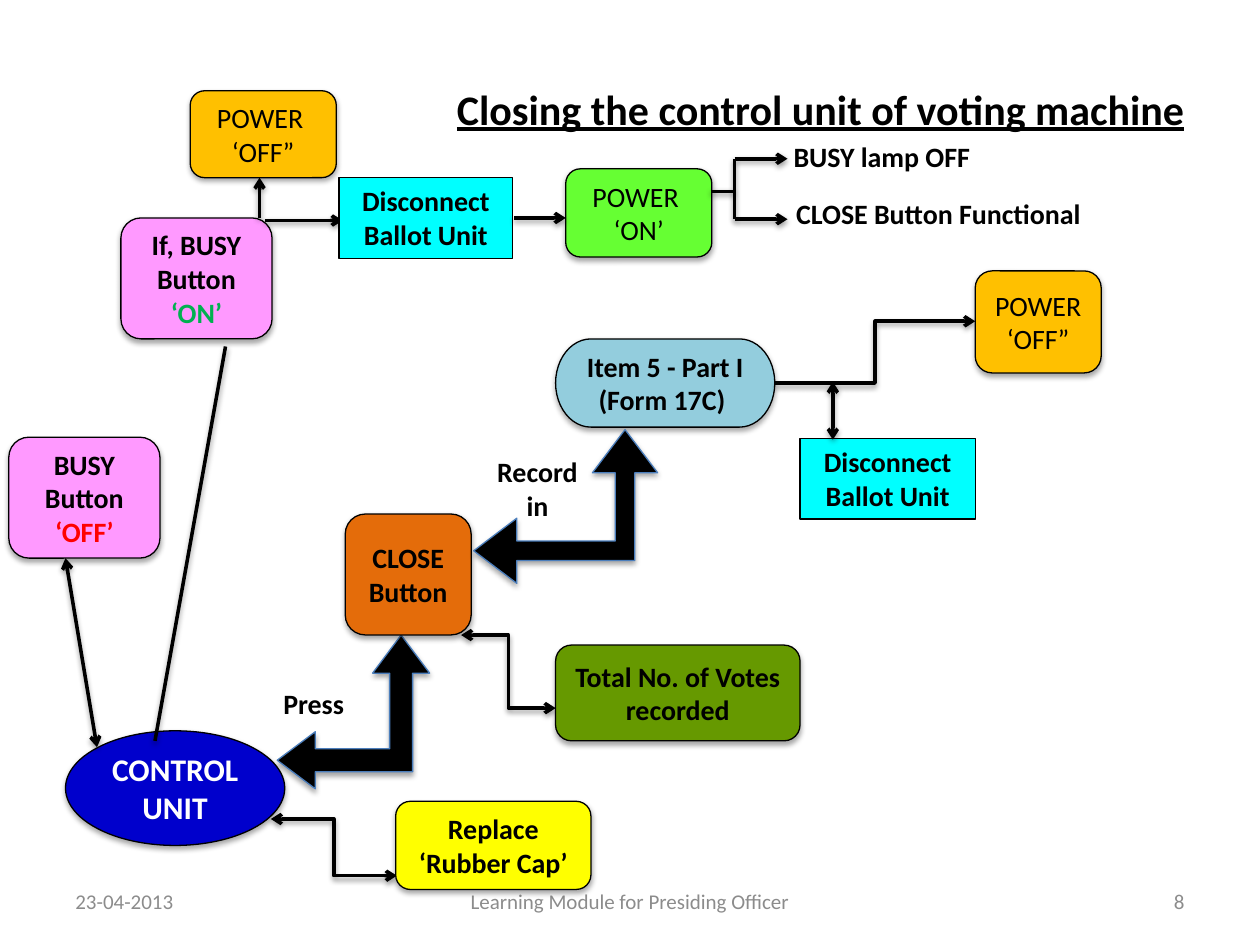
from lxml import etree
from pptx import Presentation
from pptx.dml.color import RGBColor
from pptx.enum.shapes import MSO_CONNECTOR, MSO_SHAPE
from pptx.enum.text import MSO_ANCHOR, PP_ALIGN
from pptx.oxml.ns import qn
from pptx.util import Inches, Pt

ROUND, RECT = MSO_SHAPE.ROUNDED_RECTANGLE, MSO_SHAPE.RECTANGLE
OVAL, TERMINATOR = MSO_SHAPE.OVAL, MSO_SHAPE.FLOWCHART_TERMINATOR
CORNER_ARROW = MSO_SHAPE.LEFT_UP_ARROW
STRAIGHT, ELBOW = MSO_CONNECTOR.STRAIGHT, MSO_CONNECTOR.ELBOW
LEFT, CENTER, RIGHT = PP_ALIGN.LEFT, PP_ALIGN.CENTER, PP_ALIGN.RIGHT
TOP, MIDDLE = MSO_ANCHOR.TOP, MSO_ANCHOR.MIDDLE
COLORS = {
    "black": "000000", "white": "FFFFFF", "gray": "8C8C8C", "navy": "0000CC",
    "orange": "E46C0A", "olive": "669900", "sky": "93CDDD", "amber": "FFC000",
    "cyan": "00FFFF", "yellow": "FFFF00", "pink": "FF99FF", "lime": "66FF33",
    "red": "FF0000", "green": "00B050", "edge": "4B7EBC",
}
FONT = "Calibri"
CELL = 0.1
POWER_OFF = ["POWER ", "‘OFF”"]
DISCONNECT = ["Disconnect Ballot Unit"]


def rgb(name):
    return RGBColor.from_string(COLORS[name])


def cells(box, *lengths):
    return [Inches((n + box[i % 2]) * CELL) if i < 2 else Inches(n * CELL)
            for i, n in enumerate(lengths)]


def add_shadow(s, dist, alpha):
    effects = etree.SubElement(s._element.spPr, qn("a:effectLst"))
    shadow = etree.SubElement(effects, qn("a:outerShdw"), blurRad="40000",
                              dist=str(dist), dir="5400000", rotWithShape="0")
    color = etree.SubElement(shadow, qn("a:srgbClr"), val=COLORS["black"])
    etree.SubElement(color, qn("a:alpha"), val=str(alpha * 1000))


def write(s, lines, size=16, color="black", bold=True, align=CENTER,
          anchor=MIDDLE, underline=False, accent=None):
    tf = s.text_frame
    tf.word_wrap = True
    tf.vertical_anchor = anchor
    for i, line in enumerate(lines):
        p = tf.paragraphs[0] if i == 0 else tf.add_paragraph()
        p.alignment = align
        r = p.add_run()
        r.text = line
        r.font.name, r.font.size = FONT, Pt(size)
        r.font.bold, r.font.underline = bold, underline
        r.font.color.rgb = rgb(accent if accent and i else color)


def add_label(slide, box, at, text, **style):
    s = slide.shapes.add_textbox(*cells(box, *at))
    write(s, [text], **{"anchor": TOP, "align": LEFT, **style})


def add_node(slide, box, at, fill, lines=(), kind=ROUND, edge="black",
             shadow=True, adjust=(), **style):
    s = slide.shapes.add_shape(kind, *cells(box, *at))
    s.fill.solid()
    s.fill.fore_color.rgb = rgb(fill)
    s.line.color.rgb = rgb(edge)
    s.line.width = Pt(0.75)
    for i, value in enumerate(adjust):
        s.adjustments[i] = value
    if shadow:
        add_shadow(s, 23000, 35)
    else:
        s.shadow.inherit = False
    write(s, lines, **style)


def add_link(slide, box, start, end, ends="tail", kind=STRAIGHT):
    s = slide.shapes.add_connector(kind, *cells(box, *start), *cells(box, *end))
    s.line.color.rgb = rgb("black")
    s.line.width = Pt(2)
    ln = s.line._get_or_add_ln()
    for end_name in ends.split():
        etree.SubElement(ln, qn(f"a:{end_name}End"), type="arrow")
    add_shadow(s, 20000, 38)


def add_heading(slide, box):
    add_label(slide, box, (0, 0, *box[2:]),
              "Closing the control unit of voting machine",
              size=24, align=RIGHT, underline=True)


def add_footer(slide, box):
    width, height = box[2:]
    side, middle = 23.3, 31.7
    style = {"size": 12, "color": "gray", "bold": False, "anchor": MIDDLE}
    for left, span, text, align in (
            (0, side, "23-04-2013", LEFT),
            ((width - middle) / 2, middle, "Learning Module for Presiding Officer", CENTER),
            (width - side, side, "8", RIGHT)):
        add_label(slide, box, (left, 0, span, height), text, align=align, **style)


def add_control_unit(slide, box):
    add_node(slide, box, (4.5, 31, 17.4, 9.1), "navy", ["CONTROL UNIT"],
             kind=OVAL, size=18, color="white")
    add_node(slide, box, (21.3, 23.4, 12.1, 12.2), "black", kind=CORNER_ARROW,
             edge="edge", adjust=(0.151, 0.187, 0.25))
    add_label(slide, box, (20.8, 27, 9.6, 3.7), "Press")
    add_link(slide, box, (20.8, 38), (30.8, 42.5), "head tail", ELBOW)
    add_node(slide, box, (30.7, 36.6, 15.5, 7), "yellow", ["Replace ‘Rubber Cap’"])
    add_link(slide, box, (4.5, 17.3), (7, 32.3), "head tail")
    add_node(slide, box, (0, 7.7, 12, 9.6), "pink", ["BUSY Button", "‘OFF’"], accent="red")
    add_link(slide, box, (17.2, 0.5), (11.6, 31.8), "")


def add_close_button(slide, box):
    add_node(slide, box, (0, 19.3, 10, 9.6), "orange", ["CLOSE Button"])
    add_link(slide, box, (9.2, 28.9), (16.7, 34.7), "head tail", ELBOW)
    add_node(slide, box, (16.7, 29.7, 19.4, 7.6), "olive", ["Total No. of Votes recorded"])
    add_node(slide, box, (16.7, 5.4, 17.4, 7), "sky", ["Item 5 - Part I (Form 17C) "],
             kind=TERMINATOR)
    add_node(slide, box, (10.2, 12.6, 14.6, 12.2), "black", kind=CORNER_ARROW,
             edge="edge", adjust=(0.127, 0.212, 0.281))
    add_label(slide, box, (10.5, 14.1, 9.5, 6.4), "Record in", align=CENTER)
    add_link(slide, box, (34.1, 8.9), (50, 4), kind=ELBOW)
    add_node(slide, box, (50, 0, 10, 8.1), "amber", POWER_OFF, bold=False)
    add_node(slide, box, (36.1, 13.3, 13.9, 6.4), "cyan", DISCONNECT,
             kind=RECT, shadow=False, anchor=TOP)
    add_link(slide, box, (38.7, 8.8), (38.7, 13.4), "head tail")


def add_busy_on(slide, box):
    add_node(slide, box, (0, 10.1, 12, 9.6), "pink", ["If, BUSY Button", "‘ON’"], accent="green")
    add_link(slide, box, (11, 10.1), (11, 6.9))
    add_link(slide, box, (11.4, 10.3), (17.6, 10.3))
    add_node(slide, box, (5.5, 0, 11.6, 6.9), "amber", POWER_OFF, bold=False)
    add_node(slide, box, (17.3, 6.9, 13.8, 6.4), "cyan", DISCONNECT,
             kind=RECT, shadow=False, anchor=TOP)
    add_node(slide, box, (35.3, 6.2, 11.6, 7), "lime", ["POWER ", "‘ON’"], bold=False)
    add_link(slide, box, (31.2, 10.1), (35.3, 10.1))
    fork, upper, lower = 48.7, 5.4, 10.2
    add_link(slide, box, (46.8, 8), (fork, 8), "")
    add_link(slide, box, (fork, lower), (fork, upper), "")
    for row in (upper, lower):
        add_link(slide, box, (fork, row), (52.9, row))
    add_label(slide, box, (51.9, 3.4, 20, 3.7), " BUSY lamp OFF")
    add_label(slide, box, (52.1, 7.9, 27.6, 3.7), " CLOSE Button Functional")


def main():
    prs = Presentation()
    prs.slide_width, prs.slide_height = Inches(10), Inches(7.5)
    slide = prs.slides.add_slide(prs.slide_layouts[6])
    add_heading(slide, (5, 6.1, 90, 63.4))
    add_footer(slide, (5, 69.5, 90, 4))
    add_control_unit(slide, (0.7, 27))
    add_close_button(slide, (27.4, 21.5))
    add_busy_on(slide, (9.6, 7.2))
    prs.save("out.pptx")


if __name__ == "__main__":
    main()
